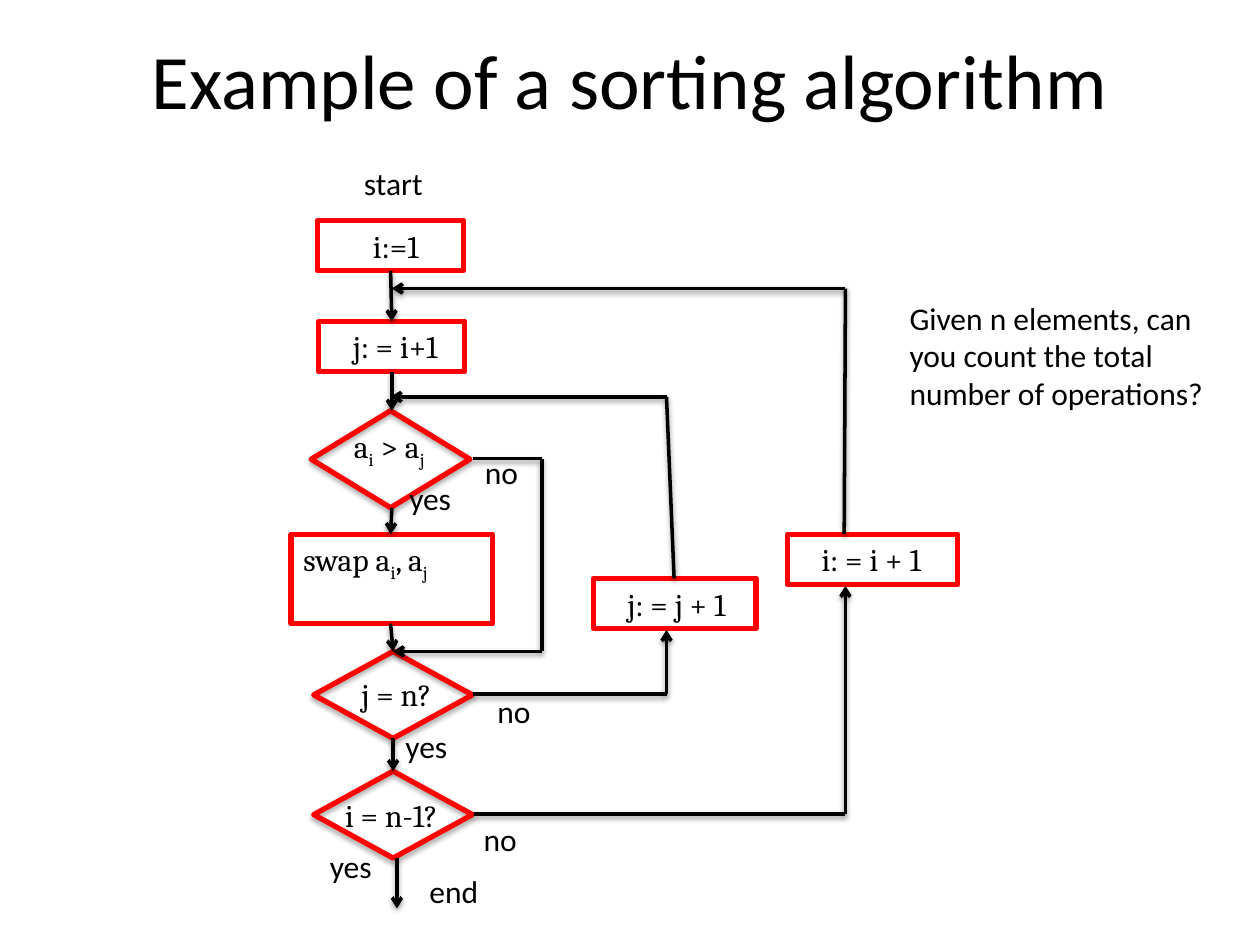
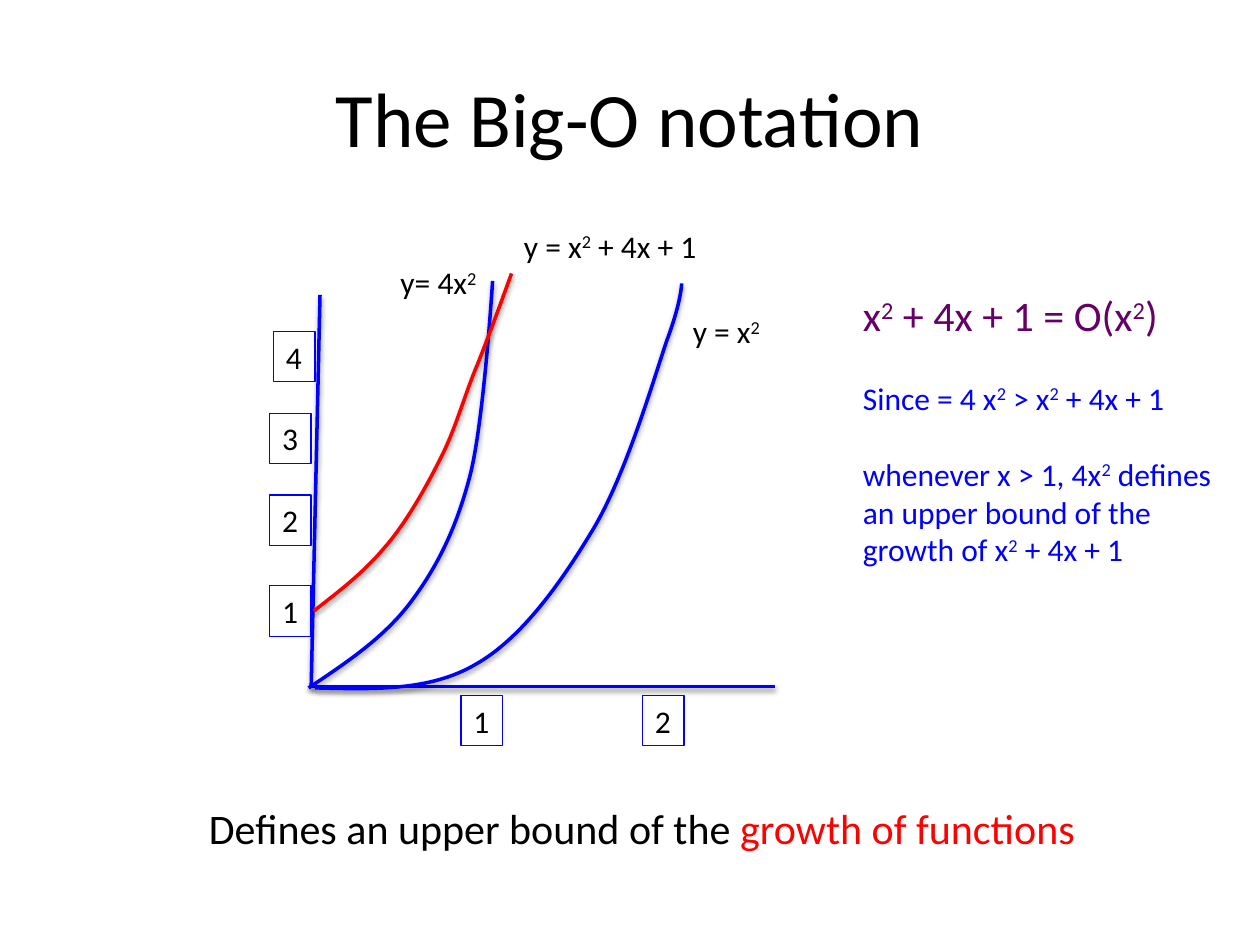
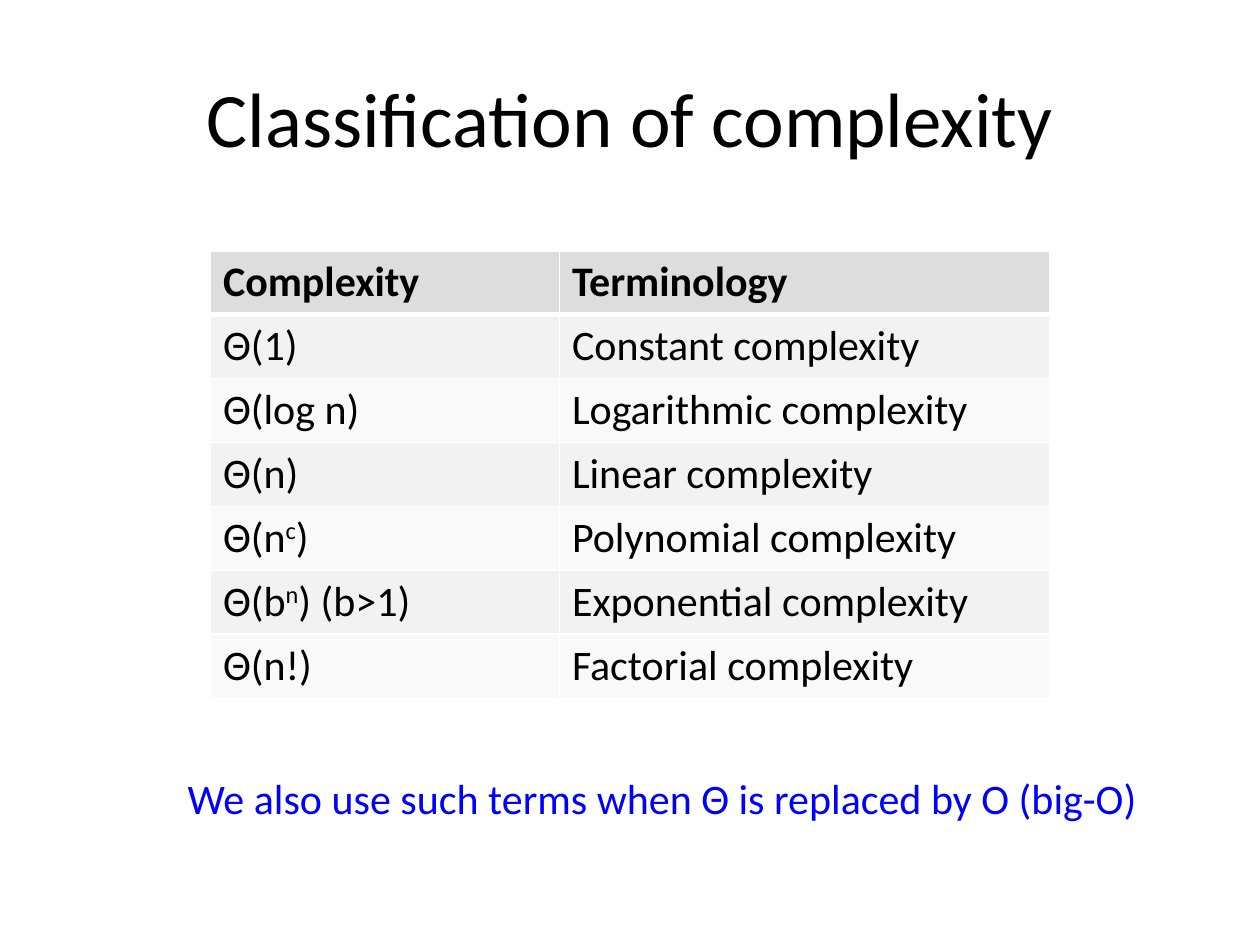
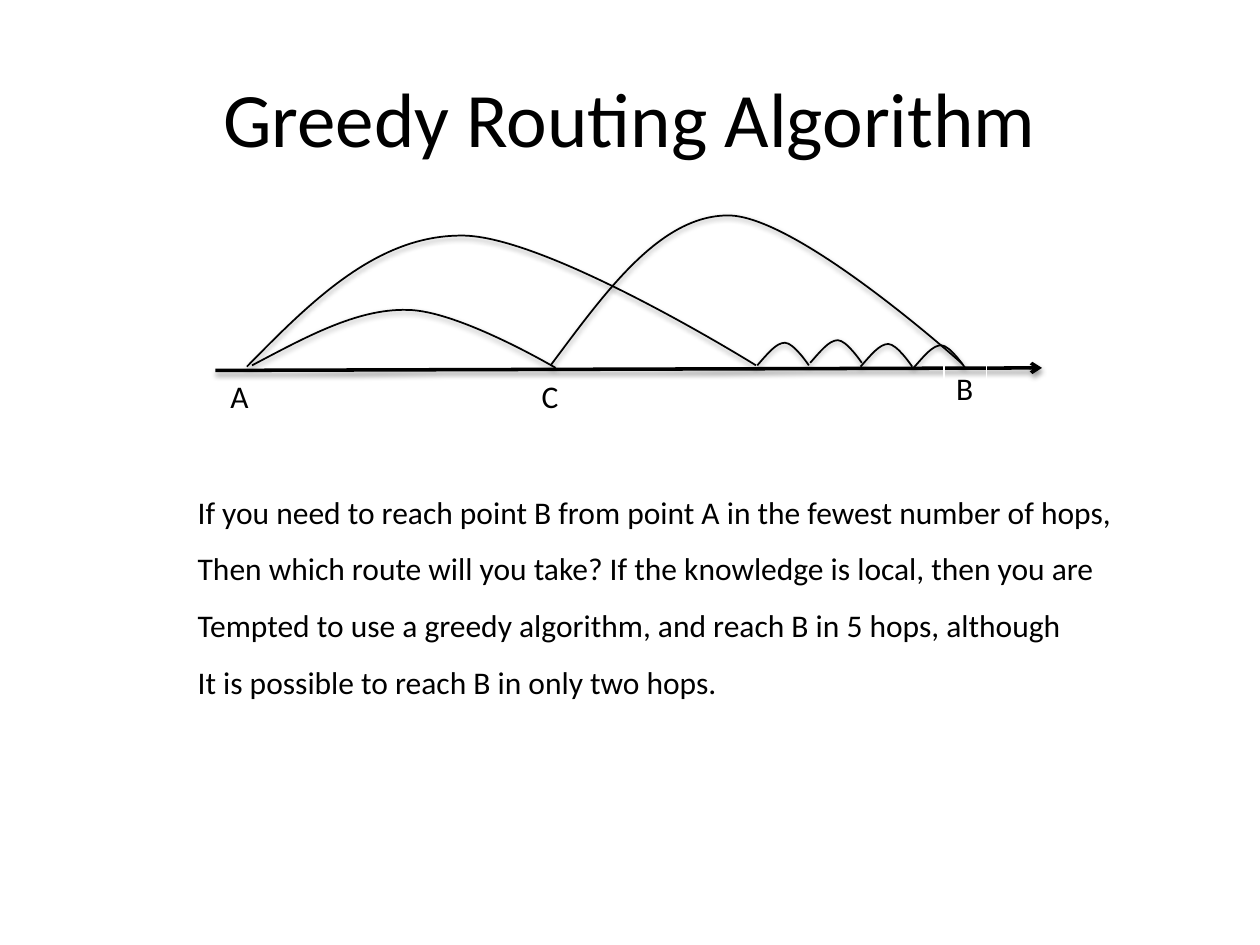
from dataclasses import dataclass
from itertools import pairwise

from lxml import etree
from pptx import Presentation
from pptx.dml.color import RGBColor
from pptx.enum import shapes, text
from pptx.oxml.ns import qn
from pptx.util import Inches, Pt


@dataclass(frozen=True)
class Theme:
    font: str = "Calibri"
    code_font: str = "Cambria"
    title_size: int = 44
    large: int = 24
    body: int = 18
    black: str = "000000"
    red: str = "FF0000"
    blue: str = "0000FF"
    purple: str = "660066"
    white: str = "FFFFFF"
    header: str = "DDDDDD"
    bands: tuple = ("F2F2F2", "F9F9F9")


T = Theme()
BASELINES = {"^": "30000", "_": "-25000"}
TITLE_TOP = 0.3
LINE_H = 0.4


def rgb(value):
    return RGBColor.from_string(value)


def split_scripts(content):
    """Yield (piece, baseline); ^ raises and _ lowers the next character."""
    plain = ""
    chars = iter(content)
    for ch in chars:
        if ch in BASELINES:
            if plain:
                yield plain, None
            yield next(chars), BASELINES[ch]
            plain = ""
        else:
            plain += ch
    if plain:
        yield plain, None


def write(p, content, size=T.body, font=T.font, color=T.black, bold=False):
    for piece, baseline in split_scripts(content):
        r = p.add_run()
        r.text = piece
        r.font.size = Pt(size)
        r.font.name = font
        r.font.bold = bold
        r.font.color.rgb = rgb(color)
        if baseline:
            r._r.get_or_add_rPr().set("baseline", baseline)


def add_paragraph(tf, content, before=0, **fmt):
    p = tf.add_paragraph()
    p.space_before = Pt(before)
    write(p, content, **fmt)


def add_text(s, content, at, wrap=False, outline=None, indent=0, spacing=None, **fmt):
    sp = s.shapes.add_textbox(*map(Inches, at))
    if outline:
        set_line(sp, *outline)
    tf = sp.text_frame
    tf.word_wrap = wrap
    tf.auto_size = text.MSO_AUTO_SIZE.SHAPE_TO_FIT_TEXT
    tf.margin_left = Inches(0.1 + indent)
    for i, line in enumerate(content.split("\n")):
        p = tf.add_paragraph() if i else tf.paragraphs[0]
        if spacing:
            p.line_spacing = spacing
        write(p, line, **fmt)
    return tf


def set_line(sp, color, width):
    sp.line.color.rgb = rgb(color)
    sp.line.width = Pt(width)


def add_shadow(sp, alpha=38, dist=1.6):
    spPr = sp._element.spPr
    for old in spPr.findall(qn("a:effectLst")):
        spPr.remove(old)
    effects = etree.SubElement(spPr, qn("a:effectLst"))
    shadow = etree.SubElement(effects, qn("a:outerShdw"), blurRad=str(Pt(3.1)),
                              dist=str(Pt(dist)), dir="5400000", rotWithShape="0")
    color = etree.SubElement(shadow, qn("a:srgbClr"), val=T.black)
    etree.SubElement(color, qn("a:alpha"), val=str(alpha * 1000))


def add_line(s, start, end, color=T.black, arrow=False):
    sp = s.shapes.add_connector(shapes.MSO_CONNECTOR.STRAIGHT, *map(Inches, (*start, *end)))
    set_line(sp, color, 2)
    if arrow:
        etree.SubElement(sp.line._get_or_add_ln(), qn("a:tailEnd"), type="arrow")
    add_shadow(sp)


def add_route(s, *points):
    for start, end in pairwise(points):
        add_line(s, start, end, arrow=end == points[-1])


def add_curve(s, points, color=T.black, width=1):
    """Draw a chain of cubic curves: a start, then three points per curve."""
    start, *rest = [tuple(map(Inches, point)) for point in points]
    builder = s.shapes.build_freeform(*start)
    builder.add_line_segments(rest, close=False)
    sp = builder.convert_to_shape()
    sp.fill.background()
    set_line(sp, color, width)
    add_shadow(sp)
    outline = next(sp._element.iter(qn("a:path")))
    segments = outline.findall(qn("a:lnTo"))
    for i in range(0, len(segments), 3):
        cubic = etree.SubElement(outline, qn("a:cubicBezTo"))
        for segment in segments[i:i + 3]:
            cubic.append(segment[0])
            outline.remove(segment)


def add_decision(s, at):
    sp = s.shapes.add_shape(shapes.MSO_SHAPE.FLOWCHART_DECISION, *map(Inches, at))
    sp.fill.background()
    set_line(sp, T.red, 3)
    add_shadow(sp, alpha=35, dist=1.8)


def add_step(s, content, at, indent=0.17):
    add_text(s, content, at, wrap=True, outline=(T.red, 3), indent=indent, font=T.code_font)


def set_borders(cell, **widths):
    tcPr = cell._tc.get_or_add_tcPr()
    for side in ("L", "R", "T", "B"):
        ln = etree.SubElement(tcPr, qn(f"a:ln{side}"), w=str(Pt(widths.get(side, 1))))
        fill = etree.SubElement(ln, qn("a:solidFill"))
        etree.SubElement(fill, qn("a:srgbClr"), val=T.white)


def add_table(s, rows, left, top, widths, row_h):
    frame = s.shapes.add_table(len(rows), len(widths), Inches(left), Inches(top),
                               Inches(sum(widths)), Inches(row_h * len(rows)))
    table = frame.table
    for column, width in zip(table.columns, widths):
        column.width = Inches(width)
    for i, row in enumerate(rows):
        table.rows[i].height = Inches(row_h)
        for j, content in enumerate(row):
            cell = table.cell(i, j)
            set_borders(cell, T=3 if i == 1 else 1, B=1 if i else 3)
            cell.fill.solid()
            cell.fill.fore_color.rgb = rgb(T.bands[(i - 1) % 2] if i else T.header)
            write(cell.text_frame.paragraphs[0], content, size=T.large, bold=i == 0)


def add_slide(prs, title, top=TITLE_TOP):
    s = prs.slides.add_slide(prs.slide_layouts.get_by_name("Title Only"))
    sp = s.shapes.title
    sp.left, sp.top, sp.width, sp.height = map(Inches, (0.5, top, 9, 1.25))
    sp.text_frame.vertical_anchor = text.MSO_ANCHOR.MIDDLE
    p = sp.text_frame.paragraphs[0]
    p.alignment = text.PP_ALIGN.CENTER
    write(p, title, size=T.title_size)
    return s


def sorting_slide(prs):
    s = add_slide(prs, "Example of a sorting algorithm", top=0)
    add_step(s, "i:=1", (2.52, 1.75, 1.16, LINE_H), indent=0.34)
    add_step(s, "j: = i+1", (2.53, 2.55, 1.16, LINE_H))
    add_step(s, "j: = j + 1", (4.71, 4.59, 1.29, LINE_H))
    add_step(s, "i: = i + 1", (6.25, 4.24, 1.35, LINE_H))
    swap = add_text(s, "swap a_i, a_j", (2.31, 4.24, 1.6, 0.71), wrap=True,
                    outline=(T.red, 3), font=T.code_font)
    swap.auto_size = text.MSO_AUTO_SIZE.NONE

    for left, top, height in ((2.47, 3.26, 0.77), (2.49, 5.17, 0.69), (2.49, 6.12, 0.69)):
        add_decision(s, (left, top, 1.26, height))
    for test, left, top, width in (("a_i > a_j", 2.71, 3.34, 0.79),
                                   ("j = n?", 2.77, 5.31, 0.77),
                                   ("i = n-1?", 2.64, 6.27, 0.99)):
        add_text(s, test, (left, top, width, LINE_H), font=T.code_font)

    add_route(s, (3.1, 2.15), (3.11, 2.55))
    add_route(s, (3.11, 2.95), (3.11, 3.26))
    add_route(s, (3.11, 4.03), (3.1, 4.24))
    add_route(s, (3.1, 4.95), (3.12, 5.17))
    add_route(s, (3.12, 5.86), (3.12, 6.12))
    add_route(s, (3.15, 6.81), (3.15, 7.21))
    add_route(s, (3.75, 3.64), (4.3, 3.64), (4.3, 5.17), (3.12, 5.17))
    add_route(s, (3.75, 5.51), (5.29, 5.51), (5.29, 5))
    add_route(s, (5.35, 4.59), (5.29, 3.15), (3.1, 3.15))
    add_route(s, (3.76, 6.46), (6.71, 6.46), (6.71, 4.65))
    add_route(s, (6.7, 4.24), (6.71, 2.29), (3.11, 2.29))

    label_widths = {"start": 0.68, "end": 0.59, "yes": 0.54, "no": 0.47}
    for label, left, top in (("start", 2.79, 1.25), ("yes", 3.15, 3.75), ("no", 3.75, 3.55),
                             ("yes", 3.12, 5.72), ("no", 3.85, 5.44), ("yes", 2.52, 6.67),
                             ("no", 3.74, 6.46), ("end", 3.31, 6.87)):
        add_text(s, label, (left, top, label_widths[label], LINE_H))
    add_text(s, "Given n elements, can you count the total\nnumber of operations?",
             (7.12, 2.32, 2.61, 1.01), wrap=True)


def big_o_slide(prs):
    s = add_slide(prs, "The Big-O notation")
    origin = (2.47, 5.45)
    add_line(s, (2.54, 2.34), origin, color=T.blue)
    add_line(s, origin, (6.15, 5.45), color=T.blue)
    for tick, left, top in (("1", 3.66, 5.52), ("2", 5.1, 5.52), ("1", 2.14, 4.65),
                            ("2", 2.14, 3.93), ("3", 2.14, 3.28), ("4", 2.17, 2.63)):
        add_text(s, tick, (left, top, 0.33, LINE_H), outline=(T.blue, 0.75))

    four_x_squared = [(2.45, 5.46), (2.75, 5.26), (3.05, 5.06), (3.26, 4.78),
                      (3.47, 4.5), (3.62, 4.2), (3.73, 3.78),
                      (3.84, 3.36), (3.91, 2.23), (3.91, 2.23)]
    x_squared = [(2.5, 5.46), (2.95, 5.47), (3.41, 5.49), (3.78, 5.27),
                 (4.15, 5.06), (4.47, 4.6), (4.72, 4.18),
                 (4.97, 3.75), (5.18, 3.04), (5.29, 2.71),
                 (5.41, 2.39), (5.41, 2.25), (5.41, 2.25)]
    polynomial = [(2.49, 4.85), (2.68, 4.7), (2.87, 4.56), (3.04, 4.36),
                  (3.21, 4.17), (3.37, 3.89), (3.49, 3.65),
                  (3.61, 3.42), (3.67, 3.19), (3.77, 2.94),
                  (3.87, 2.7), (4.06, 2.17), (4.06, 2.17)]
    for points, color in ((four_x_squared, T.blue), (x_squared, T.blue), (polynomial, T.red)):
        add_curve(s, points, color=color, width=2)
    add_text(s, "y = x^2", (5.4, 2.43, 0.75, LINE_H))
    add_text(s, "y= 4x^2", (3.08, 2.04, 0.82, LINE_H))
    add_text(s, "y = x^2 + 4x + 1", (4.06, 1.75, 1.65, LINE_H))

    tf = add_text(s, "x^2 + 4x + 1 = O(x^2)", (6.75, 2.25, 3.05, 2.32), wrap=True,
                  size=T.large, color=T.purple)
    for content, before in (("Since = 4 x^2 > x^2 + 4x + 1", 22),
                            ("whenever x > 1, 4x^2 defines", 22),
                            ("an upper bound of the", 0),
                            ("growth of x^2 + 4x + 1", 0)):
        add_paragraph(tf, content, before=before, color=T.blue)
    tf = add_text(s, "Defines an upper bound of the ", (1.56, 6.32, 7.09, 0.5), size=T.large)
    write(tf.paragraphs[0], "growth of functions", size=T.large, color=T.red)


def complexity_slide(prs):
    s = add_slide(prs, "Classification of complexity")
    rows = [("Complexity", "Terminology"),
            ("Θ(1)", "Constant complexity"),
            ("Θ(log n)", "Logarithmic complexity"),
            ("Θ(n)", "Linear complexity"),
            ("Θ(n^c)", "Polynomial complexity"),
            ("Θ(b^n) (b>1)", "Exponential complexity"),
            ("Θ(n!)", "Factorial complexity")]
    add_table(s, rows, left=1.67, top=1.99, widths=(2.77, 3.89), row_h=0.5)
    add_text(s, "We also use such terms when Θ is replaced by O (big-O)",
             (1.39, 6.08, 7.78, 0.5), size=T.large, color=T.blue)


def routing_slide(prs):
    s = add_slide(prs, "Greedy Routing Algorithm")
    add_line(s, (1.71, 2.94), (8.27, 2.92), arrow=True)
    add_text(s, "A", (1.73, 2.94, 0.35, LINE_H))
    add_text(s, "B", (7.49, 2.88, 0.34, LINE_H), outline=(T.white, 1))
    add_text(s, "C", (4.2, 2.94, 0.34, LINE_H))

    short_hop = [(0, 0), (0.08, -0.09), (0.15, -0.18), (0.22, -0.18),
                 (0.29, -0.18), (0.41, 0), (0.41, 0)]
    for x, y in ((6.01, 2.9), (6.43, 2.88), (6.83, 2.91), (7.25, 2.92)):
        add_curve(s, [(x + dx, y + dy) for dx, dy in short_hop])
    add_curve(s, [(1.96, 2.91), (2.47, 2.39), (2.99, 1.87), (3.66, 1.87),
                  (4.33, 1.86), (6, 2.9), (6, 2.9)])
    add_curve(s, [(2, 2.9), (2.42, 2.68), (2.83, 2.45), (3.23, 2.46),
                  (3.63, 2.46), (4.41, 2.92), (4.41, 2.92)])
    add_curve(s, [(4.37, 2.9), (4.81, 2.31), (5.24, 1.71), (5.78, 1.71),
                  (6.33, 1.71), (7.64, 2.89), (7.64, 2.89)])

    add_text(s, "If you need to reach point B from point A in the fewest number of hops,\n"
                "Then which route will you take? If the knowledge is local, then you are\n"
                "Tempted to use a greedy algorithm, and reach B in 5 hops, although\n"
                "It is possible to reach B in only two hops.",
             (1.47, 3.71, 7.51, 2.22), spacing=1.5)


def main():
    prs = Presentation()
    prs.slide_width, prs.slide_height = Inches(10), Inches(7.5)
    sorting_slide(prs)
    big_o_slide(prs)
    complexity_slide(prs)
    routing_slide(prs)
    prs.save("out.pptx")


if __name__ == "__main__":
    main()
